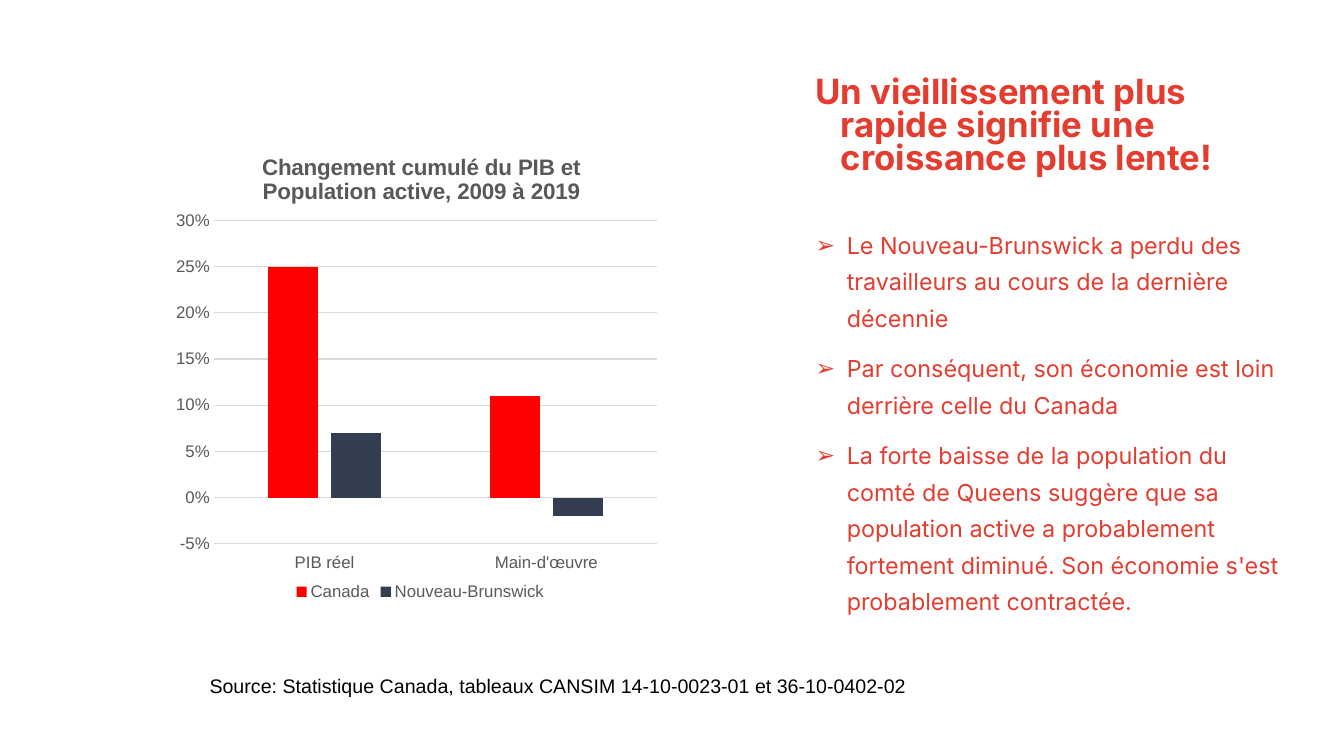
from lxml import etree
from pptx import Presentation
from pptx.chart.data import CategoryChartData
from pptx.dml.color import RGBColor
from pptx.enum.chart import XL_CHART_TYPE as ChartType
from pptx.enum.chart import XL_LEGEND_POSITION as LegendPosition
from pptx.enum.chart import XL_TICK_LABEL_POSITION as LabelPosition
from pptx.enum.chart import XL_TICK_MARK as TickMark
from pptx.oxml import parse_xml
from pptx.oxml.ns import nsdecls, qn
from pptx.util import Inches, Pt

RED = RGBColor(0xE4, 0x3D, 0x30)
CANADA_RED = RGBColor(0xFF, 0x00, 0x00)
NAVY = RGBColor(0x33, 0x3F, 0x50)
GRAY = RGBColor(0x59, 0x59, 0x59)
GRID_GRAY = RGBColor(0xD9, 0xD9, 0xD9)
BLACK = RGBColor(0x00, 0x00, 0x00)

HEADING = "Un vieillissement plus rapide signifie une croissance plus lente!"
POINTS = [
    "Le Nouveau-Brunswick a perdu des travailleurs au cours de la dernière décennie",
    "Par conséquent, son économie est loin derrière celle du Canada",
    "La forte baisse de la population du comté de Queens suggère que sa population active "
    "a probablement fortement diminué. Son économie s'est probablement contractée.",
]
SOURCE = "Source: Statistique Canada, tableaux CANSIM 14-10-0023-01 et 36-10-0402-02"
CHART_TITLE = ["Changement cumulé du PIB et", "Population active, 2009 à 2019"]
CATEGORIES = ["PIB réel", "Main-d'œuvre"]
SERIES = [
    ("Canada", (0.25, 0.11), CANADA_RED),
    ("Nouveau-Brunswick", (0.07, -0.02), NAVY),
]


def style_font(font, name, size, color, bold=False):
    font.name = name
    font.size = Pt(size)
    font.color.rgb = color
    font.bold = bold


def add_text(slide, box, texts, font, line_spacing=1.0, margin=0, hanging=0, bullet=None):
    """Place one paragraph per text, with an optional hanging indent and bullet."""
    shape = slide.shapes.add_textbox(*map(Inches, box))
    frame = shape.text_frame
    frame.word_wrap = True
    for index, text in enumerate(texts):
        paragraph = frame.paragraphs[0] if index == 0 else frame.add_paragraph()
        paragraph.line_spacing = line_spacing
        paragraph.space_before = Pt(10 if index else 0)
        properties = paragraph._p.get_or_add_pPr()
        properties.set("marL", str(Inches(margin)))
        properties.set("indent", str(Inches(-hanging)))
        if bullet:
            color = etree.SubElement(properties, qn("a:buClr"))
            etree.SubElement(color, qn("a:srgbClr"), val=str(RED))
            etree.SubElement(properties, qn("a:buFont"), typeface="Arial")
            etree.SubElement(properties, qn("a:buChar"), char=bullet)
        run = paragraph.add_run()
        run.text = text
        style_font(run.font, *font)


def add_message(slide, left, top, width):
    add_text(slide, (left, top, width, 1.3), [HEADING], ("Inter", 24.8, RED, True),
             line_spacing=0.8, margin=0.5, hanging=0.25)
    add_text(slide, (left, top + 1.44, width, 4.33), POINTS, ("Inter", 16.7, RED),
             line_spacing=1.3, margin=0.56, hanging=0.31, bullet="➢")


def manual_layout(target=None, **fractions):
    """Build a chart layout from fractions of the chart area."""
    parts = [f'<c:layoutTarget val="{target}"/>'] if target else []
    parts += [f'<c:{key}Mode val="edge"/>' for key in ("x", "y")]
    parts += [f'<c:{key} val="{value}"/>' for key, value in fractions.items()]
    return parse_xml(f'<c:layout {nsdecls("c")}><c:manualLayout>{"".join(parts)}'
                     '</c:manualLayout></c:layout>')


def set_layout(element, layout, position):
    for old in element.findall(qn("c:layout")):
        element.remove(old)
    element.insert(position, layout)


def add_chart_title(chart):
    frame = chart.chart_title.text_frame
    for index, text in enumerate(CHART_TITLE):
        paragraph = frame.paragraphs[0] if index == 0 else frame.add_paragraph()
        run = paragraph.add_run()
        run.text = text
        style_font(run.font, "Arial", 16, GRAY, True)
    chart.chart_title.include_in_layout = False
    set_layout(chart.chart_title._element, manual_layout(x=0.18, y=0.03), 1)


def style_axes(chart):
    category_axis, value_axis = chart.category_axis, chart.value_axis
    for axis in (category_axis, value_axis):
        axis.major_tick_mark = axis.minor_tick_mark = TickMark.NONE
        style_font(axis.tick_labels.font, "Arial", 12, GRAY)
    category_axis.tick_label_position = LabelPosition.LOW
    value_axis.minimum_scale, value_axis.maximum_scale = -0.05, 0.3
    value_axis.major_unit = 0.05
    value_axis.tick_labels.number_format = "0%"
    value_axis.tick_labels.number_format_is_linked = False
    value_axis.format.line.fill.background()
    for line in (category_axis.format.line, value_axis.major_gridlines.format.line):
        line.color.rgb = GRID_GRAY
        line.width = Pt(0.75)


def add_growth_chart(slide, box):
    data = CategoryChartData(number_format="0%")
    data.categories = CATEGORIES
    for name, values, _ in SERIES:
        data.add_series(name, values)
    frame = slide.shapes.add_chart(ChartType.COLUMN_CLUSTERED, *map(Inches, box), data)
    chart = frame.chart
    style_font(chart.font, "Arial", 10, BLACK)
    add_chart_title(chart)
    style_axes(chart)

    plot = chart.plots[0]
    plot.gap_width, plot.overlap = 219, -27
    plot.vary_by_categories = False
    for series, (_, _, color) in zip(plot.series, SERIES):
        series.invert_if_negative = False
        series.format.fill.solid()
        series.format.fill.fore_color.rgb = color
    plot_area = chart._chartSpace.chart.plotArea
    set_layout(plot_area, manual_layout("inner", x=0.09, y=0.18, w=0.88, h=0.69), 0)

    chart.has_legend = True
    chart.legend.position = LegendPosition.BOTTOM
    chart.legend.include_in_layout = False
    style_font(chart.legend.font, "Arial", 12, GRAY)


def main():
    presentation = Presentation()
    presentation.slide_width = Inches(13.33)
    presentation.slide_height = Inches(7.5)
    slide = presentation.slides.add_slide(presentation.slide_layouts[6])
    add_message(slide, 7.74, 0.72, 5.09)
    add_text(slide, (1.98, 6.64, 9.36, 0.34), [SOURCE], ("Arial", 14, BLACK))
    add_growth_chart(slide, (1.67, 1.35, 5, 4.65))
    presentation.save("out.pptx")


if __name__ == "__main__":
    main()
